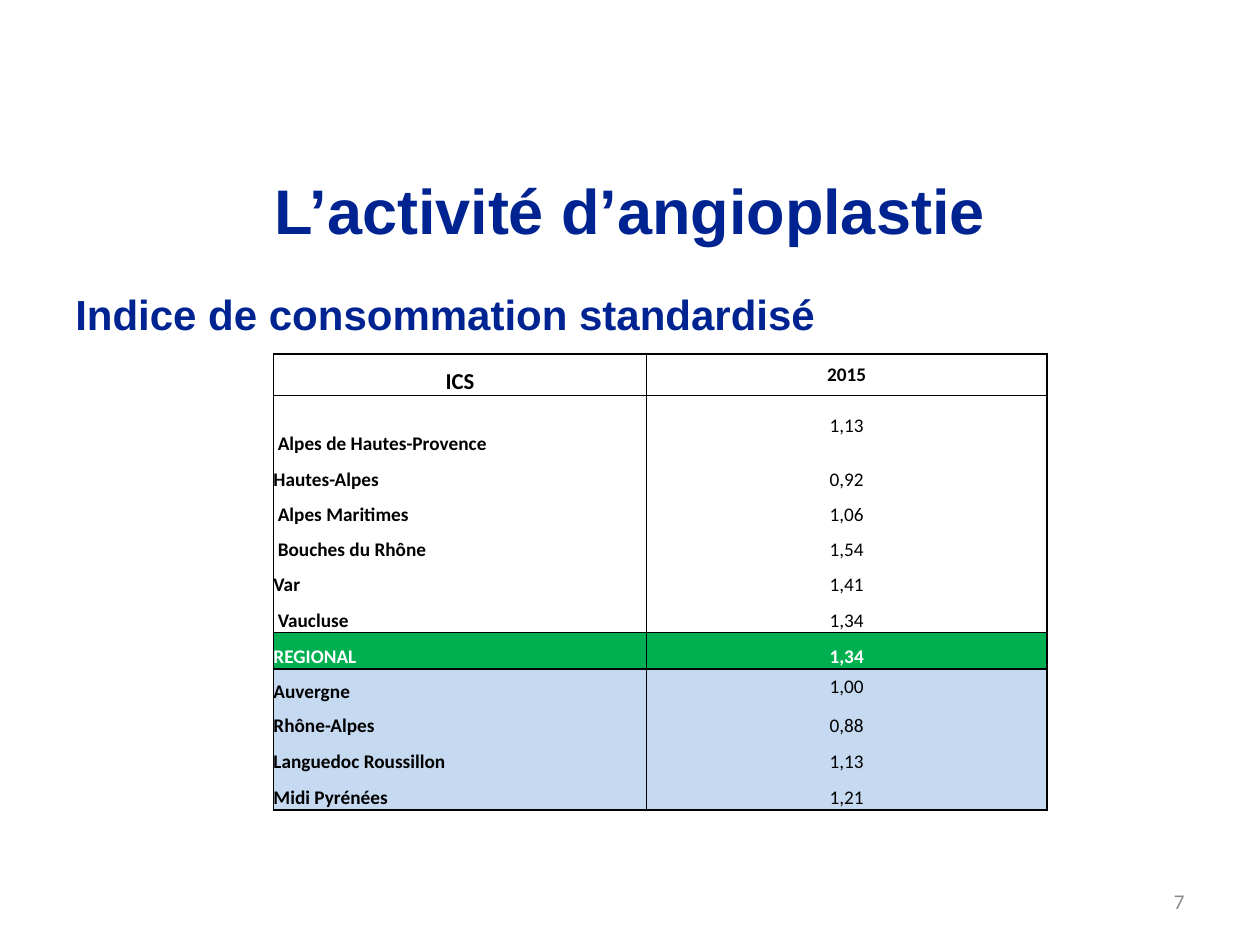
import pptx
import pptx.dml.color
import pptx.enum.text
import pptx.oxml
import pptx.oxml.ns
import pptx.util

Inches = pptx.util.Inches
Pt = pptx.util.Pt
RGBColor = pptx.dml.color.RGBColor
Align = pptx.enum.text.PP_ALIGN
Anchor = pptx.enum.text.MSO_ANCHOR

NAVY = RGBColor(0x00, 0x23, 0x92)
GREY = RGBColor(0x8C, 0x8C, 0x8C)
BLACK = RGBColor(0x00, 0x00, 0x00)
WHITE = RGBColor(0xFF, 0xFF, 0xFF)
GREEN = RGBColor(0x00, 0xB0, 0x50)
LIGHT_BLUE = RGBColor(0xC5, 0xD9, 0xF1)

# Each section is framed as a whole: fill, then rows of label, value and height
SECTIONS = [
    (None, [("ICS", "2015", 0.33)]),
    (None, [
        (" Alpes de Hautes-Provence", "1,13", 0.48),
        ("Hautes-Alpes", "0,92", 0.28),
        (" Alpes Maritimes", "1,06", 0.28),
        (" Bouches du Rhône", "1,54", 0.28),
        ("Var", "1,41", 0.28),
        (" Vaucluse", "1,34", 0.28),
    ]),
    (GREEN, [("REGIONAL", "1,34", 0.29)]),
    (LIGHT_BLUE, [
        ("Auvergne", "1,00", 0.28),
        ("Rhône-Alpes", "0,88", 0.27),
        ("Languedoc Roussillon", "1,13", 0.28),
        ("Midi Pyrénées", "1,21", 0.29),
    ]),
]
COLUMN_WIDTHS = [2.96, 3.18]


def add_run(paragraph, text, font_name, size, color, bold=False):
    run = paragraph.add_run()
    run.text = text
    run.font.name = font_name
    run.font.size = Pt(size)
    run.font.bold = bold
    run.font.color.rgb = color


def add_text(slide, box, text, font_name, size, color, bold=False,
             align=Align.LEFT, anchor=Anchor.MIDDLE, margin_top=0.05):
    shape = slide.shapes.add_textbox(*(Inches(length) for length in box))
    frame = shape.text_frame
    frame.word_wrap = True
    frame.vertical_anchor = anchor
    frame.margin_top = Inches(margin_top)
    paragraph = frame.paragraphs[0]
    paragraph.alignment = align
    add_run(paragraph, text, font_name, size, color, bold)


def set_borders(cell, top, bottom):
    properties = cell._tc.get_or_add_tcPr()
    for side, visible in (("L", True), ("R", True), ("T", top), ("B", bottom)):
        paint = (f'<a:solidFill><a:srgbClr val="{str(BLACK)}"/></a:solidFill>'
                 if visible else "<a:noFill/>")
        properties.append(pptx.oxml.parse_xml(
            f'<a:ln{side} {pptx.oxml.ns.nsdecls("a")} w="{int(Pt(1))}">'
            f"{paint}</a:ln{side}>"))


def fill_cell(cell, text, size, color, bold, align, anchor, fill):
    cell.margin_left = cell.margin_right = 0
    cell.margin_top = cell.margin_bottom = 0
    cell.vertical_anchor = anchor
    if fill is None:
        cell.fill.background()
    else:
        cell.fill.solid()
        cell.fill.fore_color.rgb = fill
    paragraph = cell.text_frame.paragraphs[0]
    paragraph.alignment = align
    add_run(paragraph, text, "Calibri", size, color, bold)


def add_index_table(slide, left, top):
    heights = [row[2] for _, rows in SECTIONS for row in rows]
    table = slide.shapes.add_table(
        len(heights), len(COLUMN_WIDTHS), Inches(left), Inches(top),
        Inches(sum(COLUMN_WIDTHS)), Inches(sum(heights))).table
    table.first_row = False
    table.horz_banding = False
    for column, width in zip(table.columns, COLUMN_WIDTHS):
        column.width = Inches(width)
    for row, height in zip(table.rows, heights):
        row.height = Inches(height)

    row_index = 0
    for fill, rows in SECTIONS:
        color = WHITE if fill == GREEN else BLACK
        for position, (label, value, _) in enumerate(rows):
            first, last = position == 0, position == len(rows) - 1
            header = row_index == 0
            label_cell = table.cell(row_index, 0)
            value_cell = table.cell(row_index, 1)
            for cell in (label_cell, value_cell):
                set_borders(cell, first, last)
            fill_cell(label_cell, label, 13 if header else 11, color, True,
                      Align.CENTER if header else Align.LEFT,
                      Anchor.BOTTOM, fill)
            # Values opening a section are centred, except in the total row
            middle = first and fill != GREEN
            fill_cell(value_cell, value, 11, color, len(rows) == 1,
                      Align.CENTER,
                      Anchor.MIDDLE if middle else Anchor.BOTTOM, fill)
            row_index += 1


def main():
    presentation = pptx.Presentation()
    presentation.slide_width = Inches(10)
    presentation.slide_height = Inches(7.5)
    slide = presentation.slides.add_slide(presentation.slide_layouts[6])

    # Subtitle, page number and title
    add_text(slide, (0.5, 1.75, 9, 1.53), "Indice de consommation standardisé",
             "Arial", 24, NAVY, True, anchor=Anchor.TOP, margin_top=0.54)
    add_text(slide, (7.17, 6.95, 2.33, 0.4), "7", "Calibri", 12, GREY,
             align=Align.RIGHT)
    add_text(slide, (0.5, 1.31, 9, 0.71), "L’activité d’angioplastie",
             "Arial", 36, NAVY, True, align=Align.CENTER)

    # Standardised consumption index by area
    add_index_table(slide, 2.17, 2.81)

    presentation.save("out.pptx")


if __name__ == "__main__":
    main()
